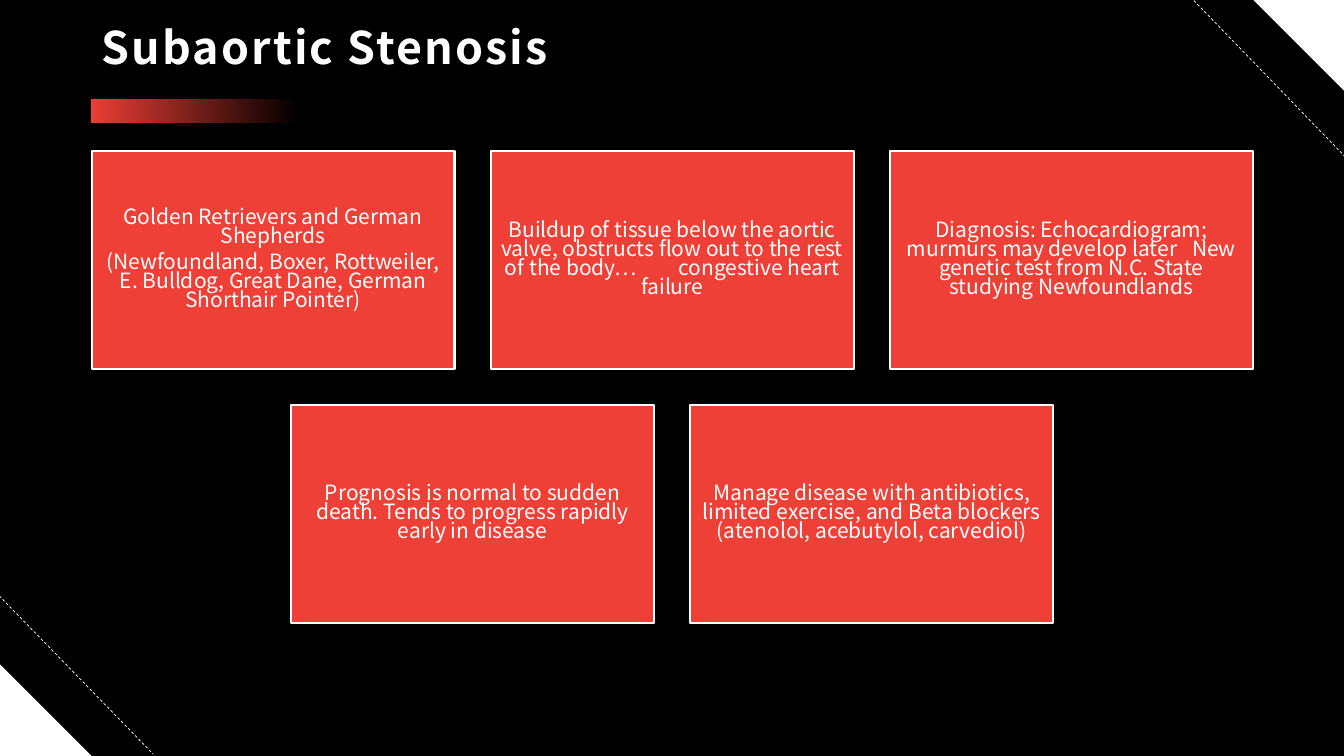
import lxml.etree
import pptx
import pptx.util
import pptx.dml.color
import pptx.enum.dml
import pptx.enum.shapes
import pptx.enum.text
import pptx.oxml.ns
from dataclasses import dataclass

Pt = pptx.util.Pt
Color = pptx.dml.color.RGBColor
Shape = pptx.enum.shapes.MSO_SHAPE
Align = pptx.enum.text.PP_ALIGN
Anchor = pptx.enum.text.MSO_ANCHOR
qn = pptx.oxml.ns.qn


@dataclass(frozen=True)
class Theme:
    back: Color = Color(0, 0, 0)
    white: Color = Color(255, 255, 255)
    red: Color = Color(0xEE, 0x40, 0x36)
    head: str = "Noto Sans CJK TC"
    body: str = "Noto Sans CJK JP"
    big: float = 32
    small: float = 15


THEME = Theme()
WIDE, HIGH = 960, 540
LEFT, TOP = 65.5, 108
CARD_W, CARD_H, GAP = 259.2, 155.5, 25.9

# Each card is a list of paragraphs; each paragraph is a list of pieces,
# and a number between two pieces is the extra width of the space there.
ROWS = [
    [
        [["Golden Retrievers and German Shepherds"],
         ["(Newfoundland, Boxer, Rottweiler, E. Bulldog, Great Dane, "
          "German Shorthair Pointer)"]],
        [["Buildup of tissue below the aortic valve, obstructs flow out "
          "to the rest of the body…", 26, "congestive heart failure"]],
        [["Diagnosis: Echocardiogram; murmurs may develop later", 7,
          "New genetic test from N.C. State studying Newfoundlands"]],
    ],
    [
        [["Prognosis is normal to sudden death. Tends to progress rapidly "
          "early in disease"]],
        [["Manage disease with antibiotics, limited exercise, and Beta "
          "blockers (atenolol, acebutylol, carvediol)"]],
    ],
]


def style(run, face, size, bold=False, track=0):
    font = run.font
    font.name, font.size, font.bold = face, Pt(size), bold
    font.color.rgb = THEME.white
    if track:
        run._r.get_or_add_rPr().set("spc", str(int(track * 100)))


def block(slide, kind, x, y, w, h, fill):
    shape = slide.shapes.add_shape(kind, Pt(x), Pt(y), Pt(w), Pt(h))
    shape.shadow.inherit = False
    shape.fill.solid()
    shape.fill.fore_color.rgb = fill
    shape.line.fill.background()
    return shape


def dash(slide, x1, y1, x2, y2):
    line = slide.shapes.add_connector(
        pptx.enum.shapes.MSO_CONNECTOR.STRAIGHT, Pt(x1), Pt(y1), Pt(x2), Pt(y2))
    line.line.color.rgb = THEME.white
    line.line.width = Pt(0.5)
    line.line.dash_style = pptx.enum.dml.MSO_LINE.DASH
    lxml.etree.SubElement(line._element.spPr, qn("a:effectLst"))


def corners(slide):
    side = 65.5
    block(slide, Shape.RIGHT_TRIANGLE, 0, HIGH - side, side, side, THEME.white)
    peak = block(slide, Shape.RIGHT_TRIANGLE, WIDE - side, -0.7, side, side,
                 THEME.white)
    peak.rotation = 180
    dash(slide, -0.7, 425.5, 109.4, 538.6)
    dash(slide, 850.3, -2.2, 960.5, 111.6)


def accent(slide):
    bar = block(slide, Shape.RECTANGLE, 65.7, 70.8, 147, 16.9, THEME.red)
    bar.fill.gradient()
    bar.fill.gradient_angle = 0
    for stop in bar.fill.gradient_stops:
        stop.color.rgb = THEME.red
    # Fade the far end to clear
    last = bar._element.spPr.findall(".//" + qn("a:srgbClr"))[-1]
    lxml.etree.SubElement(last, qn("a:alpha")).set("val", "0")


def title(slide, text):
    box = slide.shapes.title
    box.left, box.top, box.width, box.height = Pt(65.5), Pt(13), Pt(828.7), Pt(46)
    frame = box.text_frame
    frame.text = text
    frame.vertical_anchor = Anchor.MIDDLE
    para = frame.paragraphs[0]
    para.alignment, para.line_spacing = Align.LEFT, 0.9
    style(para.runs[0], THEME.head, THEME.big, True, 1.5)


def card(slide, x, y, paras):
    box = block(slide, Shape.RECTANGLE, x, y, CARD_W, CARD_H, THEME.red)
    box.line.color.rgb = THEME.white
    box.line.width = Pt(1.5)
    frame = box.text_frame
    frame.word_wrap = True
    frame.vertical_anchor = Anchor.MIDDLE
    frame.margin_left = frame.margin_right = Pt(4.5)
    frame.margin_top = frame.margin_bottom = Pt(4.5)
    for i, parts in enumerate(paras):
        para = frame.add_paragraph() if i else frame.paragraphs[0]
        para.alignment, para.line_spacing = Align.CENTER, 0.75
        para.space_after = Pt(5.25)
        for part in parts:
            run = para.add_run()
            wide = not isinstance(part, str)
            run.text = " " if wide else part
            style(run, THEME.body, THEME.small, track=part if wide else 0)


def main():
    deck = pptx.Presentation()
    deck.slide_width, deck.slide_height = Pt(WIDE), Pt(HIGH)
    slide = deck.slides.add_slide(deck.slide_layouts[5])
    slide.background.fill.solid()
    slide.background.fill.fore_color.rgb = THEME.back

    # Decoration and heading
    corners(slide)
    accent(slide)
    title(slide, "Subaortic Stenosis")

    # Cards, with a shorter row centred under the longest
    most = max(len(row) for row in ROWS)
    for r, row in enumerate(ROWS):
        start = LEFT + (most - len(row)) * (CARD_W + GAP) / 2
        for c, paras in enumerate(row):
            card(slide, start + c * (CARD_W + GAP),
                 TOP + r * (CARD_H + GAP), paras)

    deck.save("out.pptx")


if __name__ == "__main__":
    main()
